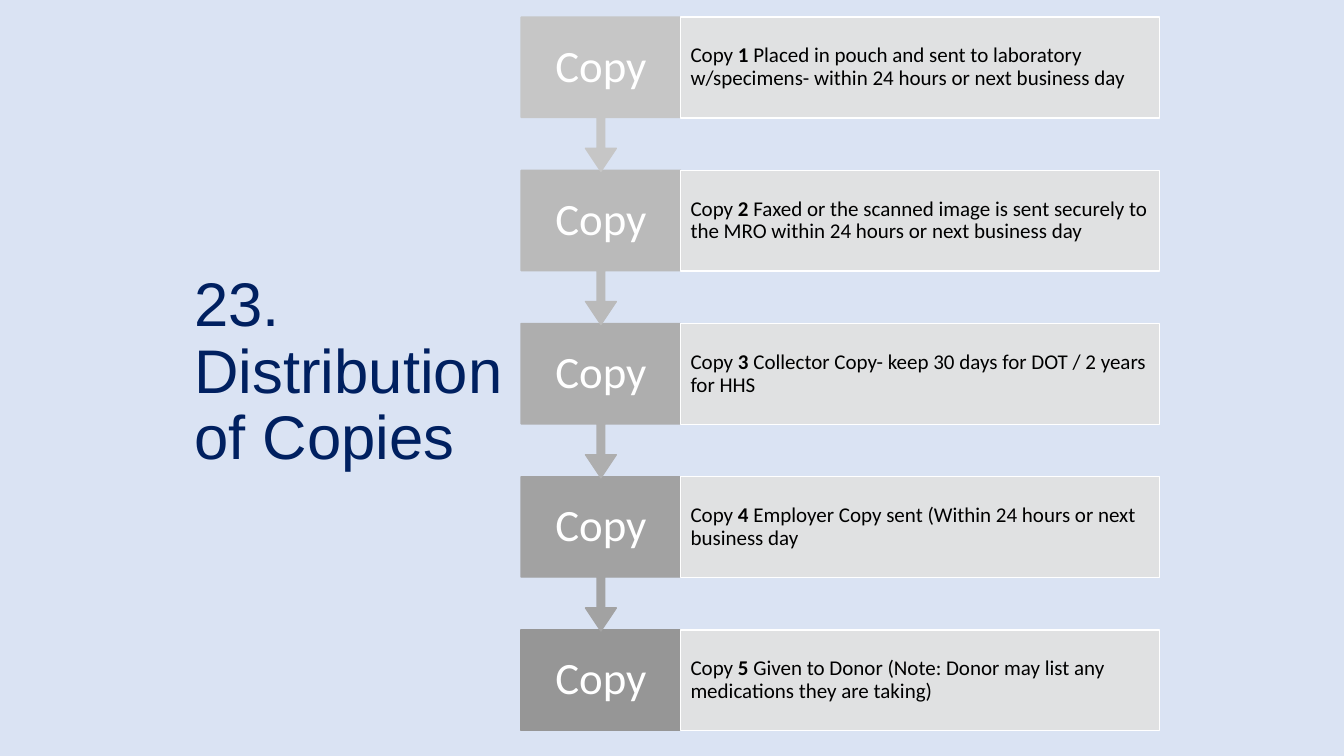
import pptx
import pptx.dml.color
import pptx.enum.shapes
import pptx.enum.text
import pptx.util
from lxml import etree
from pptx.oxml.ns import qn

Pt = pptx.util.Pt
RGBColor = pptx.dml.color.RGBColor
MSO_SHAPE = pptx.enum.shapes.MSO_SHAPE
PP_ALIGN = pptx.enum.text.PP_ALIGN
MSO_ANCHOR = pptx.enum.text.MSO_ANCHOR

# Content
TITLE = "23. Distribution of Copies"
LABEL = "Copy"
DESTINATIONS = [
    "Placed in pouch and sent to laboratory w/specimens- within 24 hours or next business day",
    "Faxed or the scanned image is sent securely to the MRO within 24 hours or next business day",
    "Collector Copy- keep 30 days for DOT / 2 years for HHS",
    "Employer Copy sent (Within 24 hours or next business day",
    "Given to Donor (Note: Donor may list any medications they are taking)",
]

# Colours
BACKGROUND = RGBColor(0xDA, 0xE3, 0xF3)
NAVY = RGBColor(0x00, 0x20, 0x60)
WHITE = RGBColor(0xFF, 0xFF, 0xFF)
BLACK = RGBColor(0x00, 0x00, 0x00)
DETAIL_GREY = RGBColor(0xE1, 0xE1, 0xE1)
STEP_GREYS = [RGBColor(level, level, level) for level in (0xC6, 0xBA, 0xAE, 0xA2, 0x96)]

# Layout in points
TITLE_BOX = (131.76, 50.4, 265.68, 432.72)
LABEL_LEFT, LABEL_WIDTH = 372.24, 114
DETAIL_LEFT, DETAIL_WIDTH = LABEL_LEFT + LABEL_WIDTH, 342
FIRST_TOP, ROW_HEIGHT, ROW_STEP = 12.24, 72, 109.44
CALLOUT_HEIGHT = 110.16
CALLOUT_ADJUSTMENTS = (0.05, 0.1, 0.15, 0.65)


def add_block(slide, kind, box, fill, line):
    shape = slide.shapes.add_shape(kind, *map(Pt, box))
    shape.shadow.inherit = False
    shape.fill.solid()
    shape.fill.fore_color.rgb = fill
    shape.line.color.rgb = line
    shape.line.width = Pt(1)
    return shape


def write_text(shape, runs, font_name, size, color, align, insets):
    """Fill a shape with one paragraph; runs are (text, bold) pairs."""
    frame = shape.text_frame
    frame.word_wrap = True
    frame.vertical_anchor = MSO_ANCHOR.MIDDLE
    frame.margin_left = frame.margin_right = Pt(insets[0])
    frame.margin_top = frame.margin_bottom = Pt(insets[1])
    paragraph = frame.paragraphs[0]
    paragraph.alignment = align
    paragraph.line_spacing = 0.9
    for text, bold in runs:
        run = paragraph.add_run()
        run.text = text
        run.font.name = font_name
        run.font.size = Pt(size)
        run.font.bold = bold
        run.font.color.rgb = color


def add_step(slide, index):
    top = FIRST_TOP + index * ROW_STEP
    label_box = (LABEL_LEFT, top, LABEL_WIDTH, ROW_HEIGHT)
    grey = STEP_GREYS[index]

    # Label block, with an arrow down to the next step
    if index == len(DESTINATIONS) - 1:
        add_block(slide, MSO_SHAPE.RECTANGLE, label_box, grey, grey)
    else:
        callout_box = (LABEL_LEFT, top, LABEL_WIDTH, CALLOUT_HEIGHT)
        callout = add_block(slide, MSO_SHAPE.UP_ARROW_CALLOUT, callout_box, grey, grey)
        callout.rotation = 180
        for position, value in enumerate(CALLOUT_ADJUSTMENTS):
            callout.adjustments[position] = value
    label = slide.shapes.add_textbox(*map(Pt, label_box))
    write_text(label, [(LABEL, False)], "Calibri", 32, WHITE, PP_ALIGN.CENTER, (8, 18))

    # Detail block, 90% opaque
    detail_box = (DETAIL_LEFT, top, DETAIL_WIDTH, ROW_HEIGHT)
    detail = add_block(slide, MSO_SHAPE.RECTANGLE, detail_box, DETAIL_GREY, WHITE)
    fill_color = detail.fill._xPr.find(qn("a:solidFill"))[0]
    etree.SubElement(fill_color, qn("a:alpha")).set("val", "90000")
    runs = [("Copy ", False), (str(index + 1), True), (" " + DESTINATIONS[index], False)]
    write_text(detail, runs, "Calibri", 15, BLACK, PP_ALIGN.LEFT, (7, 15))


def main():
    presentation = pptx.Presentation()
    presentation.slide_width, presentation.slide_height = Pt(960), Pt(540)
    slide = presentation.slides.add_slide(presentation.slide_layouts[6])
    slide.background.fill.solid()
    slide.background.fill.fore_color.rgb = BACKGROUND

    # Title
    title = slide.shapes.add_textbox(*map(Pt, TITLE_BOX))
    write_text(title, [(TITLE, False)], "Arial", 44, NAVY, PP_ALIGN.LEFT, (7.2, 3.6))

    # Steps from the bottom up, so each arrow tip lies over the next block
    for index in reversed(range(len(DESTINATIONS))):
        add_step(slide, index)

    presentation.save("out.pptx")


if __name__ == "__main__":
    main()
